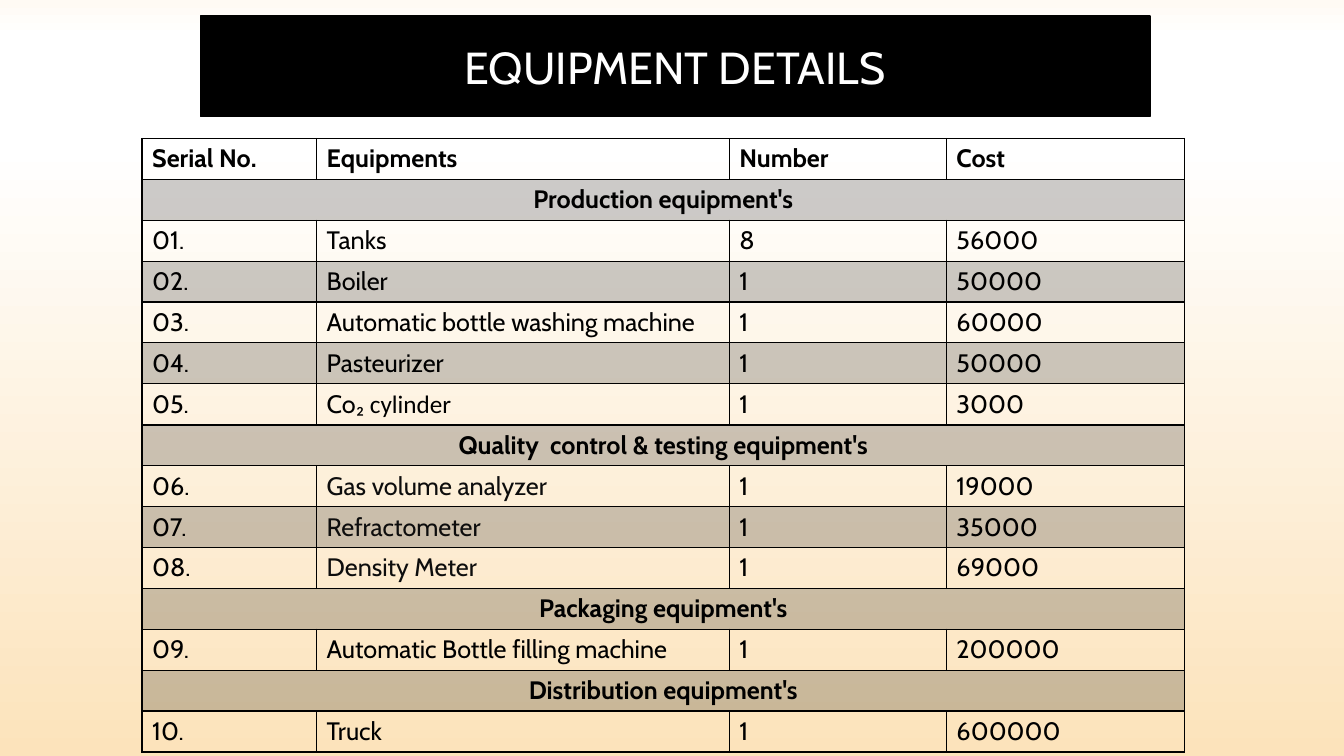
import copy

import lxml.etree
import pptx
import pptx.dml.color
import pptx.enum.text
import pptx.oxml.ns
import pptx.util

Cm = pptx.util.Cm
Pt = pptx.util.Pt
RGBColor = pptx.dml.color.RGBColor
CENTER = pptx.enum.text.PP_ALIGN.CENTER
MIDDLE = pptx.enum.text.MSO_ANCHOR.MIDDLE
qn = pptx.oxml.ns.qn

BLACK = RGBColor(0x00, 0x00, 0x00)
WHITE = RGBColor(0xFF, 0xFF, 0xFF)
SOFT_BLACK = RGBColor(0x0D, 0x0D, 0x0D)
BACKGROUND_STOPS = [
    (0, RGBColor(0xFF, 0xFA, 0xF4)),
    (5, WHITE),
    (19, WHITE),
    (100, RGBColor(0xFC, 0xE3, 0xBB)),
]

TITLE_FONT = {"name": "Cabin", "size": Pt(32), "bold": False}
BODY_FONT = {"name": "Cabin", "size": Pt(18), "bold": False}
HEADING_FONT = {**BODY_FONT, "bold": True}
CALIBRI_FONT = {**BODY_FONT, "name": "Calibri"}

COLUMN_WIDTHS = [Cm(4.4), Cm(10.4), Cm(5.47), Cm(6)]
ROW_HEIGHT = Cm(1.03)
BAND_OPACITY = 20

HEADINGS = ["Serial No.", "Equipments", "Number", "Cost"]
SECTIONS = [
    ("Production equipment's", BLACK, [
        ("Tanks", 8, 56000),
        ("Boiler", 1, 50000),
        ("Automatic bottle washing machine", 1, 60000),
        ("Pasteurizer", 1, 50000),
        ("Co₂ cylinder", 1, 3000),
    ]),
    ("Quality  control & testing equipment's", SOFT_BLACK, [
        ("Gas volume analyzer", 1, 19000),
        ("Refractometer", 1, 35000),
        ("Density Meter", 1, 69000),
    ]),
    ("Packaging equipment's", BLACK, [
        ("Automatic Bottle filling machine", 1, 200000),
    ]),
    ("Distribution equipment's", BLACK, [
        ("Truck", 1, 600000),
    ]),
]


def paint_background(slide):
    fill = slide.background.fill
    fill.gradient()
    fill.gradient_angle = 270
    stop_list = next(slide.background._cSld.iter(qn("a:gsLst")))
    for stop in list(stop_list):
        stop_list.remove(stop)
    for percent, color in BACKGROUND_STOPS:
        stop = lxml.etree.SubElement(stop_list, qn("a:gs"), pos=str(percent * 1000))
        lxml.etree.SubElement(stop, qn("a:srgbClr"), val=str(color))


def add_text(paragraph, text, font, color):
    run = paragraph.add_run()
    run.text = text
    for attribute, value in font.items():
        setattr(run.font, attribute, value)
    run.font.color.rgb = color


def place_title(slide, text):
    title = slide.shapes.title
    title.left, title.top, title.width, title.height = Cm(5.05), Cm(0.4), Cm(23.93), Cm(2.54)
    title.fill.solid()
    title.fill.fore_color.rgb = BLACK
    title.line.color.rgb = BLACK
    title.line.width = Pt(1)
    title.text_frame.vertical_anchor = MIDDLE
    paragraph = title.text_frame.paragraphs[0]
    paragraph.alignment = CENTER
    add_text(paragraph, text, TITLE_FONT, WHITE)


def draw_borders(cell):
    properties = cell._tc.get_or_add_tcPr()
    for side in ("a:lnL", "a:lnR", "a:lnT", "a:lnB"):
        border = lxml.etree.SubElement(properties, qn(side), w=str(Pt(1)))
        border_fill = lxml.etree.SubElement(border, qn("a:solidFill"))
        lxml.etree.SubElement(border_fill, qn("a:srgbClr"), val=str(BLACK))


def fill_cell(cell, banded):
    if not banded:
        cell.fill.background()
        return
    cell.fill.solid()
    cell.fill.fore_color.rgb = BLACK
    color = next(cell._tc.tcPr.find(qn("a:solidFill")).iter(qn("a:srgbClr")))
    lxml.etree.SubElement(color, qn("a:alpha"), val=str(BAND_OPACITY * 1000))


def write_cell(cell, text, font=BODY_FONT, color=BLACK):
    """Write the text, with a subscript sign and what follows it in Calibri."""
    paragraph = cell.text_frame.paragraphs[0]
    before, sign, after = text.partition("₂")
    add_text(paragraph, before, font, color)
    if sign:
        add_text(paragraph, sign + after, CALIBRI_FONT, color)


def write_section_heading(table, row, text):
    heading = table.cell(row, 0)
    heading.merge(table.cell(row, len(HEADINGS) - 1))
    write_cell(heading, text, HEADING_FONT)
    heading.text_frame.paragraphs[0].alignment = CENTER


def add_equipment_table(slide):
    row_count = 1 + sum(1 + len(items) for _, _, items in SECTIONS)
    table = slide.shapes.add_table(
        row_count, len(HEADINGS), Cm(3.58), Cm(3.49),
        sum(COLUMN_WIDTHS), ROW_HEIGHT * row_count).table
    table.first_row = table.horz_banding = False
    for column, width in zip(table.columns, COLUMN_WIDTHS):
        column.width = width
    for index, row in enumerate(table.rows):
        row.height = ROW_HEIGHT
        for cell in row.cells:
            draw_borders(cell)
            fill_cell(cell, banded=index % 2 == 1)

    for column, heading in enumerate(HEADINGS):
        write_cell(table.cell(0, column), heading, HEADING_FONT)
    row = serial = 1
    for section, name_color, items in SECTIONS:
        write_section_heading(table, row, section)
        row += 1
        for name, number, cost in items:
            write_cell(table.cell(row, 0), f"{serial:02}.")
            write_cell(table.cell(row, 1), name, color=name_color)
            write_cell(table.cell(row, 2), str(number))
            write_cell(table.cell(row, 3), str(cost))
            row += 1
            serial += 1


def main():
    presentation = pptx.Presentation()
    presentation.slide_width = Cm(33.87)
    presentation.slide_height = Cm(19.05)
    slide = presentation.slides.add_slide(presentation.slide_layouts.get_by_name("Title Only"))
    paint_background(slide)
    add_equipment_table(slide)
    place_title(slide, "EQUIPMENT DETAILS")
    presentation.save("out.pptx")


if __name__ == "__main__":
    main()
